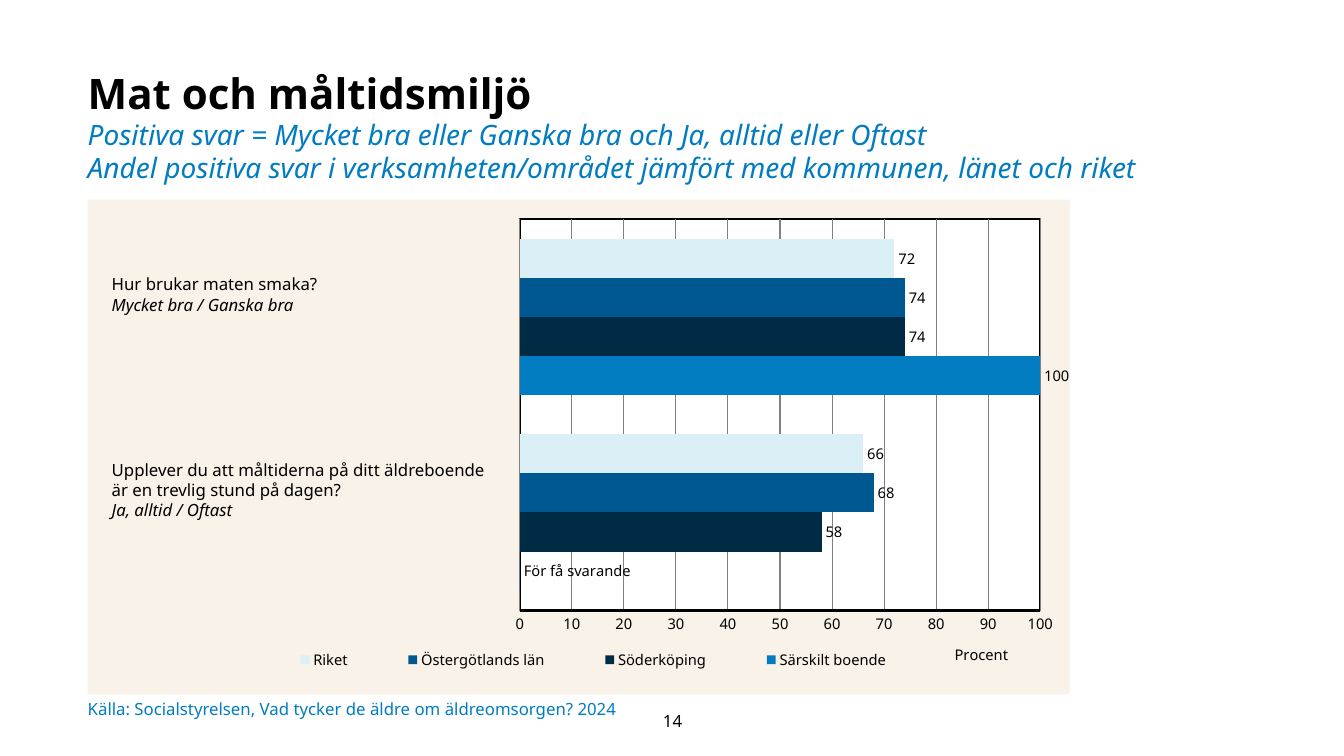
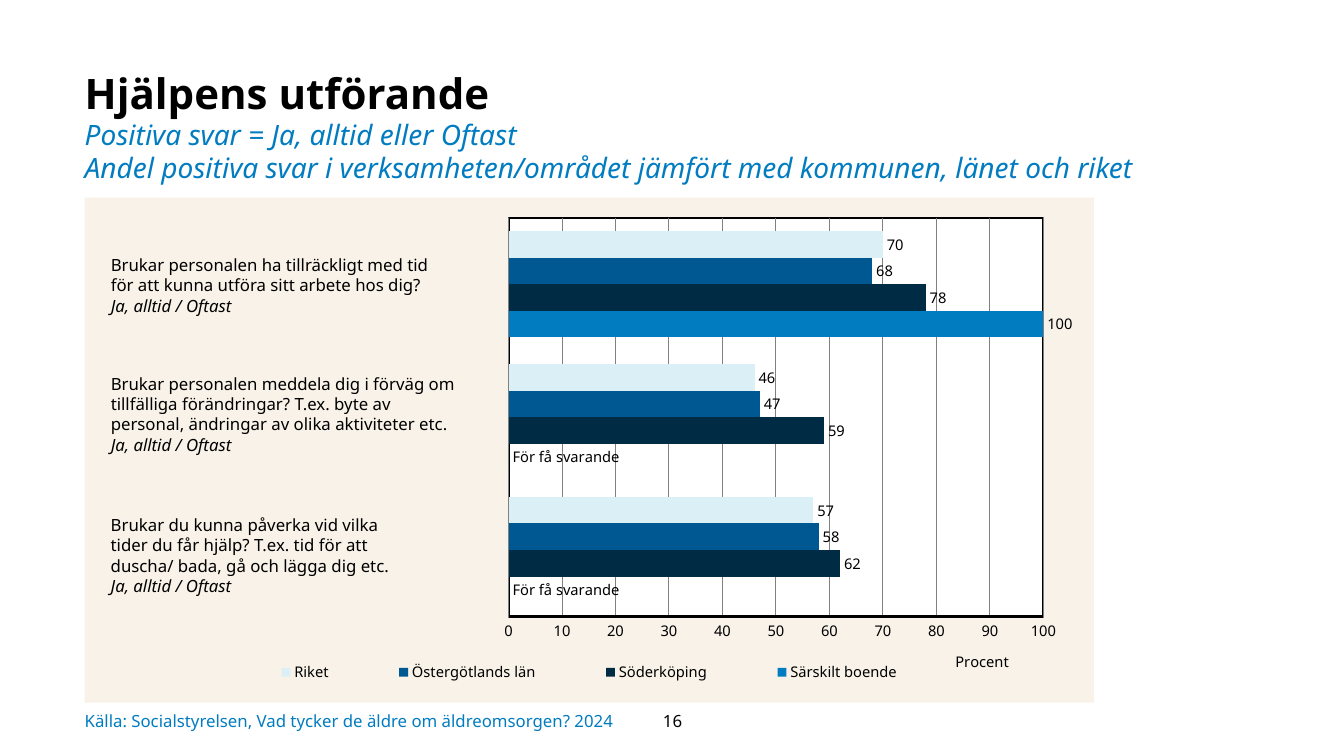
from lxml.etree import SubElement
from pptx import Presentation
from pptx.chart.data import CategoryChartData
from pptx.dml.color import RGBColor
from pptx.enum.chart import XL_CHART_TYPE, XL_LABEL_POSITION, XL_LEGEND_POSITION, XL_TICK_MARK
from pptx.enum.text import MSO_ANCHOR, PP_ALIGN
from pptx.oxml import parse_xml
from pptx.oxml.ns import nsdecls, qn
from pptx.util import Inches, Pt

FONT = "Noto Sans"
COLORS = {
    "black": "000000", "white": "FFFFFF", "cream": "F8F2E8", "grid": "808080",
    "blue": "017CC1", "navy": "002B45", "mid": "005892", "pale": "DBF0F6",
}
SERIES = [("Särskilt boende", "blue"), ("Söderköping", "navy"),
          ("Östergötlands län", "mid"), ("Riket", "pale")]
SCOPE = "Andel positiva svar i verksamheten/området jämfört med kommunen, länet och riket"
SOURCE = "Källa: Socialstyrelsen, Vad tycker de äldre om äldreomsorgen? 2024"
FEW = "För få svarande"
OFTEN = "Ja, alltid / Oftast"

SLIDES = [
    {
        "title": "Mat och måltidsmiljö",
        "rule": "Positiva svar = Mycket bra eller Ganska bra och Ja, alltid eller Oftast",
        "chart": (0.87, 1.98, 9.74, 4.91),
        "plot": (0.44, 0.04, 0.53, 0.79),
        "legend": (0.16, 0.9, 0.71, 0.06),
        "unit": (0.88, 0.89),
        "values": [(0, 100), (58, 74), (68, 74), (66, 72)],
        "asks": [
            ((1.01, 2.67, 2.56, 0.68), ["Hur brukar maten smaka?", "Mycket bra / Ganska bra"]),
            ((1.01, 4.51, 4.47, 0.88), ["Upplever du att måltiderna på ditt äldreboende",
                                        "är en trevlig stund på dagen?", OFTEN]),
        ],
        "source": (0.87, 6.89, 8.99, 0.29),
        "page": "14",
    },
    {
        "title": "Hjälpens utförande",
        "rule": "Positiva svar = Ja, alltid eller Oftast",
        "chart": (0.84, 1.96, 10.01, 5.01),
        "plot": (0.42, 0.04, 0.53, 0.79),
        "legend": (0.13, 0.91, 0.74, 0.06),
        "unit": (0.86, 0.89),
        "values": [(0, 0, 100), (62, 59, 78), (58, 47, 68), (57, 46, 70)],
        "asks": [
            ((1, 2.48, 4.72, 0.88), ["Brukar personalen ha tillräckligt med tid",
                                     "för att kunna utföra sitt arbete hos dig?", OFTEN]),
            ((1, 3.66, 3.72, 0.91), ["Brukar personalen meddela dig i förväg om tillfälliga förändringar? "
                                     "T.ex. byte av personal, ändringar av olika aktiviteter etc.", OFTEN]),
            ((1, 5.06, 2.97, 0.91), ["Brukar du kunna påverka vid vilka tider du får hjälp? "
                                     "T.ex. tid för att duscha/ bada, gå och lägga dig etc.", OFTEN]),
        ],
        "source": (0.84, 6.95, 9.03, 0.4),
        "page": "16",
    },
]


def style(font, size, color="black", bold=False, italic=False):
    """Set the look of a font."""
    font.name, font.size, font.bold, font.italic = FONT, Pt(size), bold, italic
    font.color.rgb = RGBColor.from_string(COLORS[color])


def add_text(slide, box, lines, margins=None, anchor=MSO_ANCHOR.TOP):
    """Add a text box of (text, style) lines and return its frame."""
    frame = slide.shapes.add_textbox(*map(Inches, box)).text_frame
    frame.word_wrap = True
    frame.vertical_anchor = anchor
    if margins:
        (frame.margin_left, frame.margin_top,
         frame.margin_right, frame.margin_bottom) = map(Inches, margins)
    for index, (text, look) in enumerate(lines):
        para = frame.add_paragraph() if index else frame.paragraphs[0]
        para.text = text
        style(para.runs[0].font, **look)
    return frame


def add_title(slide, left, title, rule):
    """Add the heading with its two blue lines."""
    sub = {"size": 20, "color": "blue", "italic": True}
    lines = [(title, {"size": 30, "bold": True}), (rule, sub), (SCOPE, sub)]
    frame = add_text(slide, (left, 0.7, 10.8, 1.25), lines, (0, 0, 0.1, 0.05))
    for para in frame.paragraphs:
        para.line_spacing = 0.97


def place(node, index, spots, inner=False):
    """Give a chart part a manual layout."""
    for old in node.findall(qn("c:layout")):
        node.remove(old)
    layout = parse_xml(f"<c:layout {nsdecls('c')}><c:manualLayout/></c:layout>")
    rules = [("layoutTarget", "inner")] if inner else []
    rules += [("xMode", "edge"), ("yMode", "edge"), *zip("xywh", spots)]
    for name, value in rules:
        SubElement(layout[0], qn(f"c:{name}")).set("val", str(value))
    node.insert(index, layout)


def paint(fill, line="<a:noFill/>", width=0):
    """Return chart shape properties with a fill and an outline."""
    return parse_xml(
        f'<c:spPr {nsdecls("c", "a")}><a:solidFill><a:srgbClr val="{COLORS[fill]}"/></a:solidFill>'
        f'<a:ln w="{Pt(width)}">{line}</a:ln></c:spPr>')


def set_axes(chart, unit):
    """Hide the category axis and set the percent axis."""
    chart.category_axis.visible = False
    axis = chart.value_axis
    axis.minimum_scale, axis.maximum_scale, axis.major_unit = 0, 100, 10
    axis.major_tick_mark = axis.minor_tick_mark = XL_TICK_MARK.NONE
    style(axis.tick_labels.font, 10.5)
    grid = axis.major_gridlines.format.line
    for line, color, width in ((axis.format.line, "black", 2), (grid, "grid", 0.75)):
        line.color.rgb = RGBColor.from_string(COLORS[color])
        line.width = Pt(width)
    frame = axis.axis_title.text_frame
    frame.text = "Procent"
    style(frame.paragraphs[0].runs[0].font, 10.5)
    place(axis.axis_title.element, 1, unit)


def set_bars(plot):
    """Colour and label the bars."""
    plot.gap_width, plot.overlap, plot.vary_by_categories = 100, 0, False
    for bars, (_, color) in zip(plot.series, SERIES):
        bars.format.fill.solid()
        bars.format.fill.fore_color.rgb = RGBColor.from_string(COLORS[color])
        labels = bars.data_labels
        labels.show_value = True
        labels.position = XL_LABEL_POSITION.OUTSIDE_END
        style(labels.font, 10.5)
        for index, value in enumerate(bars.values):
            if value == 0:
                label = bars.points[index].data_label
                label.text_frame.text = FEW
                style(label.text_frame.paragraphs[0].runs[0].font, 10.5)
                label.position = XL_LABEL_POSITION.OUTSIDE_END


def add_bars(slide, page):
    """Add the bar chart of positive answers."""
    data = CategoryChartData()
    data.categories = [str(n + 1) for n in range(len(page["asks"]))]
    for (name, _), values in zip(SERIES, page["values"]):
        data.add_series(name, values)
    chart = slide.shapes.add_chart(
        XL_CHART_TYPE.BAR_CLUSTERED, *map(Inches, page["chart"]), data).chart
    chart.has_title = False
    style(chart.font, 10.5)
    set_axes(chart, page["unit"])
    set_bars(chart.plots[0])
    chart.has_legend = True
    chart.legend.position = XL_LEGEND_POSITION.BOTTOM
    chart.legend.include_in_layout = False
    style(chart.legend.font, 10.5)
    body = chart.element.find(qn("c:chart"))
    place(body.find(qn("c:legend")), 1, page["legend"])
    area = body.find(qn("c:plotArea"))
    place(area, 0, page["plot"], inner=True)
    black = f'<a:solidFill><a:srgbClr val="{COLORS["black"]}"/></a:solidFill>'
    area.append(paint("white", black, 1.5))
    body.addnext(paint("cream"))


def add_page(deck, page):
    """Add one survey slide."""
    slide = deck.slides.add_slide(deck.slide_layouts[6])
    add_title(slide, page["chart"][0], page["title"], page["rule"])
    add_bars(slide, page)
    for box, lines in page["asks"]:
        last = len(lines) - 1
        add_text(slide, box, [(text, {"size": 12, "italic": n == last})
                              for n, text in enumerate(lines)])
    add_text(slide, page["source"], [(SOURCE, {"size": 12, "color": "blue"})],
             (0, 0, 0, 0), MSO_ANCHOR.MIDDLE)
    frame = add_text(slide, (6.16, 6.95, 1.02, 0.4), [(page["page"], {"size": 12})],
                     anchor=MSO_ANCHOR.MIDDLE)
    frame.paragraphs[0].alignment = PP_ALIGN.CENTER


def main():
    """Build and save the deck."""
    deck = Presentation()
    deck.slide_width, deck.slide_height = Inches(13.33), Inches(7.5)
    for page in SLIDES:
        add_page(deck, page)
    deck.save("out.pptx")


if __name__ == "__main__":
    main()
